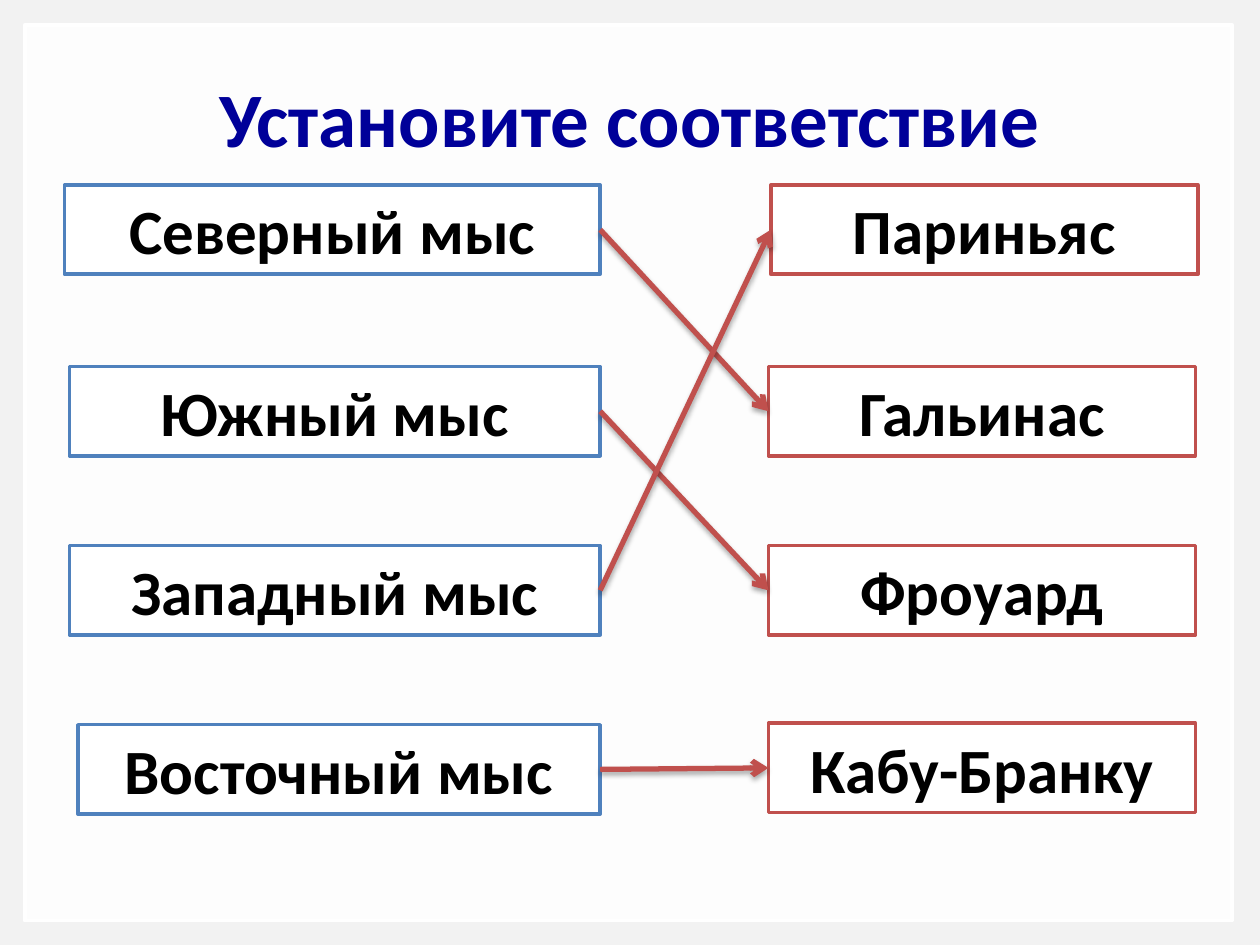
import pptx
import pptx.util
import pptx.dml.color
import pptx.enum.shapes
import pptx.enum.text
import pptx.oxml
import pptx.oxml.ns
from pptx.util import Cm, Pt

# Content: label, left edge and top edge in cm
TITLE = "Установите соответствие"
CAPES = [
    ("Северный мыс", 1.3, 3.73),
    ("Южный мыс", 1.4, 7.39),
    ("Западный мыс", 1.4, 11),
    ("Восточный мыс", 1.57, 14.61),
]
NAMES = [
    ("Париньяс", 15.54, 3.73),
    ("Гальинас", 15.49, 7.39),
    ("Фроуард", 15.49, 11),
    ("Кабу-Бранку", 15.49, 14.58),
]
MATCHES = [(0, 1), (1, 2), (2, 0), (3, 3)]  # cape index, name index

FONT = "Calibri"
BLUE, RED = "4F81BD", "C0504D"
CAPE_RIGHT, NAME_WIDTH, BOX_HEIGHT = 12.1, 8.61, 1.8
SHADOW = (
    f'<a:effectLst {pptx.oxml.ns.nsdecls("a")}>'
    '<a:outerShdw blurRad="39370" dist="22860" dir="5400000" rotWithShape="0">'
    '<a:srgbClr val="000000"><a:alpha val="35000"/></a:srgbClr>'
    '</a:outerShdw></a:effectLst>'
)


def paint(color_format, color):
    color_format.rgb = pptx.dml.color.RGBColor.from_string(color)


def add_rect(s, left, top, width, height, line):
    sp = s.shapes.add_shape(pptx.enum.shapes.MSO_SHAPE.RECTANGLE,
                            Cm(left), Cm(top), Cm(width), Cm(height))
    sp.shadow.inherit = False
    sp.fill.solid()
    paint(sp.fill.fore_color, "FFFFFF")
    paint(sp.line.color, line)
    sp.line.width = Pt(2)
    return sp


def set_text(sp, text, size, color):
    tf = sp.text_frame
    tf.word_wrap = True
    tf.vertical_anchor = pptx.enum.text.MSO_ANCHOR.MIDDLE
    p = tf.paragraphs[0]
    p.text = text
    p.alignment = pptx.enum.text.PP_ALIGN.CENTER
    p.font.name, p.font.size, p.font.bold = FONT, Pt(size), True
    paint(p.font.color, color)


def add_box(s, text, left, top, width, line):
    sp = add_rect(s, left, top, width, BOX_HEIGHT, line)
    set_text(sp, text, 36, "000000")
    return sp


def add_arrow(s, start, end):
    c = s.shapes.add_connector(pptx.enum.shapes.MSO_CONNECTOR.STRAIGHT, 0, 0, 0, 0)
    c.begin_connect(start, 3)
    c.end_connect(end, 1)
    paint(c.line.color, RED)
    c.line.width = Pt(3)
    head = f'<a:tailEnd {pptx.oxml.ns.nsdecls("a")} type="arrow"/>'
    c.line._get_or_add_ln().append(pptx.oxml.parse_xml(head))
    c.element.spPr.append(pptx.oxml.parse_xml(SHADOW))


def main():
    prs = pptx.Presentation()
    prs.slide_width, prs.slide_height = Cm(25.4), Cm(19.05)
    s = prs.slides.add_slide(prs.slide_layouts[5])

    # Background and title, with the translucent panel behind the title
    s.background.fill.solid()
    paint(s.background.fill.fore_color, "F2F2F2")
    title = s.shapes.title
    title.left, title.top, title.width, title.height = Cm(1.27), Cm(0.76), Cm(22.86), Cm(3.18)
    set_text(title, TITLE, 44, "000099")
    panel = add_rect(s, 0.5, 0.5, 24.34, 18.06, "FFFFFF")
    alpha = f'<a:alpha {pptx.oxml.ns.nsdecls("a")} val="85000"/>'
    fill_color = panel.element.spPr.find(pptx.oxml.ns.qn("a:solidFill"))[0]
    fill_color.append(pptx.oxml.parse_xml(alpha))
    title.element.addprevious(panel.element)

    # Two columns of boxes
    capes = [add_box(s, text, left, top, CAPE_RIGHT - left, BLUE) for text, left, top in CAPES]
    names = [add_box(s, text, left, top, NAME_WIDTH, RED) for text, left, top in NAMES]

    # Matching arrows
    for cape, name in MATCHES:
        add_arrow(s, capes[cape], names[name])

    prs.save("out.pptx")


if __name__ == "__main__":
    main()
